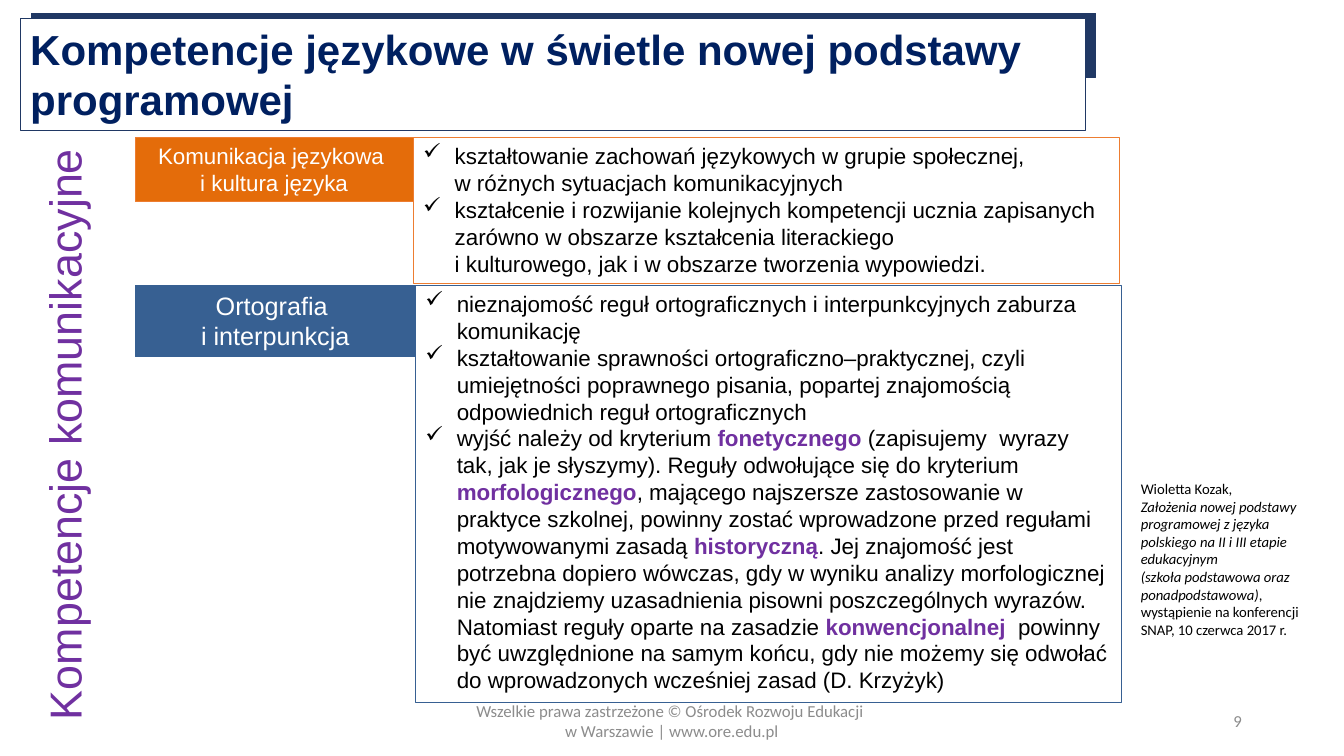
from copy import deepcopy

from pptx import Presentation
from pptx.dml.color import RGBColor
from pptx.enum.shapes import MSO_SHAPE
from pptx.enum.text import MSO_ANCHOR, MSO_AUTO_SIZE, PP_ALIGN
from pptx.oxml.ns import qn
from pptx.oxml.xmlchemy import OxmlElement
from pptx.util import Pt

RECTANGLE = MSO_SHAPE.RECTANGLE
TOP, MIDDLE = MSO_ANCHOR.TOP, MSO_ANCHOR.MIDDLE
LEFT, CENTER, RIGHT = PP_ALIGN.LEFT, PP_ALIGN.CENTER, PP_ALIGN.RIGHT
NO_AUTOFIT = MSO_AUTO_SIZE.NONE
TITLE_ONLY = 5

COLORS = {
    "white": "FFFFFF", "black": "000000", "grey": "8C8C8C",
    "navy": "203864", "title": "002060", "purple": "7030A0",
    "orange": "E46C0A", "orange line": "ED7D31", "blue": "376092",
}
KEYWORD = {"color": "purple", "bold": True}
ITALIC = {"italic": True}
BULLET_INDENT = 22.5

COMMUNICATION = [
    "kształtowanie zachowań językowych w grupie społecznej, \n"
    "w różnych sytuacjach komunikacyjnych",
    "kształcenie i rozwijanie kolejnych kompetencji ucznia zapisanych zarówno "
    "w obszarze kształcenia literackiego \n"
    "i kulturowego, jak i w obszarze tworzenia wypowiedzi.",
]
SPELLING = [
    "nieznajomość reguł ortograficznych i interpunkcyjnych zaburza komunikację",
    "kształtowanie sprawności ortograficzno–praktycznej, czyli umiejętności "
    "poprawnego pisania, popartej znajomością odpowiednich reguł ortograficznych",
    [
        "wyjść należy od kryterium ",
        ("fonetycznego", KEYWORD),
        " (zapisujemy  wyrazy  tak, jak je słyszymy). Reguły odwołujące się do kryterium ",
        ("morfologicznego", KEYWORD),
        ", mającego najszersze zastosowanie w praktyce szkolnej, powinny zostać "
        "wprowadzone przed regułami motywowanymi zasadą ",
        ("historyczną", KEYWORD),
        ". Jej znajomość jest potrzebna dopiero wówczas, gdy w wyniku analizy "
        "morfologicznej nie znajdziemy uzasadnienia pisowni poszczególnych wyrazów. "
        "Natomiast reguły oparte na zasadzie ",
        ("konwencjonalnej", KEYWORD),
        "  powinny być uwzględnione na samym końcu, gdy nie możemy się odwołać "
        "do wprowadzonych wcześniej zasad (D. Krzyżyk)",
    ],
]
SOURCE = [
    "Wioletta Kozak,",
    [("Założenia nowej podstawy programowej z języka polskiego "
      "na II i III etapie edukacyjnym", ITALIC)],
    [("(szkoła podstawowa oraz ponadpodstawowa)", ITALIC),
     ", wystąpienie na konferencji SNAP, 10 czerwca 2017 r."],
]


def color(name):
    return RGBColor.from_string(COLORS[name])


def add_span(para, text, size, font="Arial", color_name="black", bold=False, italic=False):
    """Add formatted text, with each newline as a line break of the same size."""
    for number, line in enumerate(text.split("\n")):
        if number:
            para.add_line_break()
            line_break = para._p.findall(qn("a:br"))[-1]
            line_break.append(deepcopy(span._r.rPr))
        span = para.add_run()
        span.text = line
        span.font.size = Pt(size)
        span.font.name = font
        span.font.bold = bold
        span.font.italic = italic
        span.font.color.rgb = color(color_name)


def add_check_mark(para):
    properties = para._p.get_or_add_pPr()
    properties.set("marL", str(Pt(BULLET_INDENT)))
    properties.set("indent", str(-Pt(BULLET_INDENT)))
    bullet = OxmlElement("a:buChar")
    bullet.set("char", "✓")
    properties.append(bullet)


def write(box, paragraphs, size, font="Arial", color="black", bold=False,
          align=LEFT, anchor=TOP, checked=False):
    """Fill a box; a paragraph is a string or a list of strings and (text, format)."""
    frame = box.text_frame
    frame.word_wrap = True
    frame.auto_size = NO_AUTOFIT
    frame.vertical_anchor = anchor
    for number, content in enumerate(paragraphs):
        para = frame.add_paragraph() if number else frame.paragraphs[0]
        para.alignment = align
        if checked:
            add_check_mark(para)
        for part in [content] if isinstance(content, str) else content:
            text, changes = (part, {}) if isinstance(part, str) else part
            look = {"color": color, "bold": bold, **changes}
            add_span(para, text, size, font, look["color"], look["bold"],
                     look.get("italic", False))


def paint(box, fill, line):
    if fill:
        box.fill.solid()
        box.fill.fore_color.rgb = color(fill)
    else:
        box.fill.background()
    box.line.color.rgb = color(line)
    box.line.width = Pt(0.75)


def add_panel(page, place, fill, line):
    box = page.shapes.add_shape(RECTANGLE, *map(Pt, place))
    box.shadow.inherit = False
    paint(box, fill, line)
    return box


def add_text(page, place, paragraphs, size, **look):
    box = page.shapes.add_textbox(*map(Pt, place))
    write(box, paragraphs, size, **look)
    return box


def add_title(page, text):
    """Title frame with a dark bar showing behind it."""
    title = page.shapes.title
    title.left, title.top, title.width, title.height = map(Pt, (14.4, 13, 761, 80))
    paint(title, "white", "navy")
    write(title, [text], 30, color="title", bold=True)
    bar = add_panel(page, (22.3, 9.4, 760.3, 46.1), "navy", "navy")
    title.element.addprevious(bar.element)


def add_topic(page, top, label, label_size, label_width, label_height,
              points, height, fill, line):
    """Coloured label with its outlined list on the right."""
    left = 96.5
    name = add_panel(page, (left, top, label_width, label_height), fill, line)
    write(name, [label], label_size, color="white", align=CENTER)
    details = add_panel(page, (left + label_width, top, 504.7, height), None, line)
    write(details, points, 16, checked=True)


def main():
    deck = Presentation()
    deck.slide_width, deck.slide_height = Pt(960), Pt(540)
    page = deck.slides.add_slide(deck.slide_layouts[TITLE_ONLY])

    # Footer and page number
    footer = {"font": "Calibri", "color": "grey", "anchor": MIDDLE}
    add_text(page, (318, 500.4, 324, 28.8),
             ["Wszelkie prawa zastrzeżone © Ośrodek Rozwoju Edukacji ",
              "w Warszawie | www.ore.edu.pl"], 12, align=CENTER, **footer)
    add_text(page, (678.2, 500.4, 216, 28.8), ["9"], 12, align=RIGHT, **footer)

    # Title
    add_title(page, "Kompetencje językowe w świetle nowej podstawy programowej")

    # Topics
    add_topic(page, 98, "Komunikacja językowa \ni kultura języka", 16, 198.7, 46.1,
              COMMUNICATION, 104.4, "orange", "orange line")
    add_topic(page, 203.8, "Ortografia \ni interpunkcja", 18, 200.2, 51,
              SPELLING, 298.1, "blue", "blue")

    # Vertical heading
    heading = add_text(page, (-167, 287.3, 425.5, 46.1), ["Kompetencje komunikacyjne"],
                       32, color="purple", align=CENTER)
    heading.rotation = 270

    # Source note
    add_text(page, (807.8, 339.1, 144, 121.7), SOURCE, 10.5, font="Calibri")

    deck.save("out.pptx")


if __name__ == "__main__":
    main()
